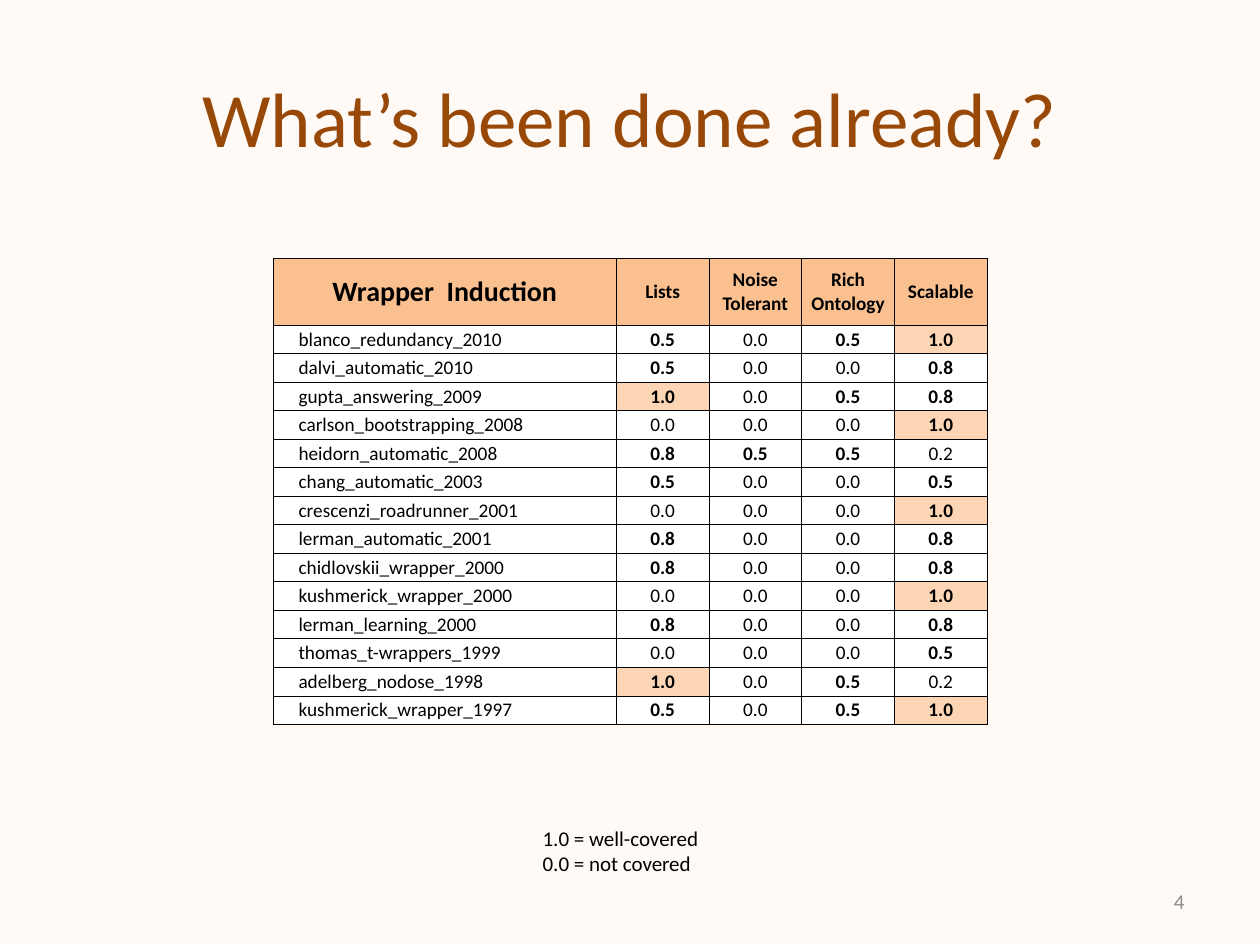
import pptx
import pptx.dml.color
import pptx.enum.text
import pptx.oxml
import pptx.oxml.ns
import pptx.util

Pt = pptx.util.Pt
ALIGN = pptx.enum.text.PP_ALIGN
ANCHOR = pptx.enum.text.MSO_ANCHOR
RGB = pptx.dml.color.RGBColor.from_string
FONT = "Calibri"
COLORS = {
    "background": "FFFAF6", "title": "984807", "number": "8C8C8C",
    "text": "000000", "border": "000000",
    "header": "FAC090", "covered": "FCD5B5", "plain": "FFFFFF",
}


def add_text(p, text, size, color="text", bold=False, align=ALIGN.LEFT):
    p.alignment = align
    r = p.add_run()
    r.text = text
    r.font.name = FONT
    r.font.size = Pt(size)
    r.font.bold = bold
    r.font.color.rgb = RGB(COLORS[color])


def style_cell(cell, fill):
    cell.margin_left = cell.margin_right = cell.margin_top = cell.margin_bottom = 0
    cell.vertical_anchor = ANCHOR.MIDDLE
    tcPr = cell._tc.get_or_add_tcPr()
    for side in ("lnL", "lnR", "lnT", "lnB"):
        tcPr.append(pptx.oxml.parse_xml(
            f'<a:{side} {pptx.oxml.ns.nsdecls("a")} w="{Pt(0.5)}"><a:solidFill>'
            f'<a:srgbClr val="{COLORS["border"]}"/></a:solidFill></a:{side}>'))
    cell.fill.solid()
    cell.fill.fore_color.rgb = RGB(COLORS[fill])


prs = pptx.Presentation()
prs.slide_width, prs.slide_height = Pt(720), Pt(540)
slide = prs.slides.add_slide(prs.slide_layouts[6])
slide.background.fill.solid()
slide.background.fill.fore_color.rgb = RGB(COLORS["background"])

# Title and slide number
for box, text, size, color, align in [
    ((36, 21.6, 648, 90), "What’s been done already?", 44, "title", ALIGN.CENTER),
    ((516, 500.4, 168, 28.8), "4", 12, "number", ALIGN.RIGHT),
]:
    tf = slide.shapes.add_textbox(*map(Pt, box)).text_frame
    tf.word_wrap = True
    tf.vertical_anchor = ANCHOR.MIDDLE
    add_text(tf.paragraphs[0], text, size, color, align=align)

# Coverage table
headers = ["Wrapper  Induction", "Lists", "Noise Tolerant", "Rich Ontology", "Scalable"]
papers = [
    ("blanco_redundancy_2010", 0.5, 0.0, 0.5, 1.0),
    ("dalvi_automatic_2010", 0.5, 0.0, 0.0, 0.8),
    ("gupta_answering_2009", 1.0, 0.0, 0.5, 0.8),
    ("carlson_bootstrapping_2008", 0.0, 0.0, 0.0, 1.0),
    ("heidorn_automatic_2008", 0.8, 0.5, 0.5, 0.2),
    ("chang_automatic_2003", 0.5, 0.0, 0.0, 0.5),
    ("crescenzi_roadrunner_2001", 0.0, 0.0, 0.0, 1.0),
    ("lerman_automatic_2001", 0.8, 0.0, 0.0, 0.8),
    ("chidlovskii_wrapper_2000", 0.8, 0.0, 0.0, 0.8),
    ("kushmerick_wrapper_2000", 0.0, 0.0, 0.0, 1.0),
    ("lerman_learning_2000", 0.8, 0.0, 0.0, 0.8),
    ("thomas_t-wrappers_1999", 0.0, 0.0, 0.0, 0.5),
    ("adelberg_nodose_1998", 1.0, 0.0, 0.5, 0.2),
    ("kushmerick_wrapper_1997", 0.5, 0.0, 0.5, 1.0),
]
name_w, score_w, header_h, row_h = 196, 53, 38.2, 16.3
table = slide.shapes.add_table(
    len(papers) + 1, len(headers), Pt(156.2), Pt(147.6),
    Pt(name_w + 4 * score_w), Pt(header_h + len(papers) * row_h)).table
for i, col in enumerate(table.columns):
    col.width = Pt(score_w if i else name_w)
for i, row in enumerate(table.rows):
    row.height = Pt(row_h if i else header_h)

for i, header in enumerate(headers):
    cell = table.cell(0, i)
    style_cell(cell, "header")
    add_text(cell.text_frame.paragraphs[0], header, 11 if i else 16,
             bold=True, align=ALIGN.CENTER)

for i, (name, *scores) in enumerate(papers, 1):
    cell = table.cell(i, 0)
    style_cell(cell, "plain")
    p = cell.text_frame.paragraphs[0]
    add_text(p, name, 11)
    p._p.get_or_add_pPr().set("marL", str(Pt(14.4)))
    # Scores from 0.5 are bold, full coverage is shaded
    for j, score in enumerate(scores, 1):
        cell = table.cell(i, j)
        style_cell(cell, "covered" if score == 1 else "plain")
        add_text(cell.text_frame.paragraphs[0], f"{score:.1f}", 11,
                 bold=score >= 0.5, align=ALIGN.CENTER)

# Legend
tf = slide.shapes.add_textbox(Pt(303), Pt(468), Pt(114), Pt(36)).text_frame
tf.word_wrap = True
tf.auto_size = pptx.enum.text.MSO_AUTO_SIZE.SHAPE_TO_FIT_TEXT
add_text(tf.paragraphs[0], "1.0 = well-covered", 12)
add_text(tf.add_paragraph(), "0.0 = not covered", 12)

prs.save("out.pptx")
